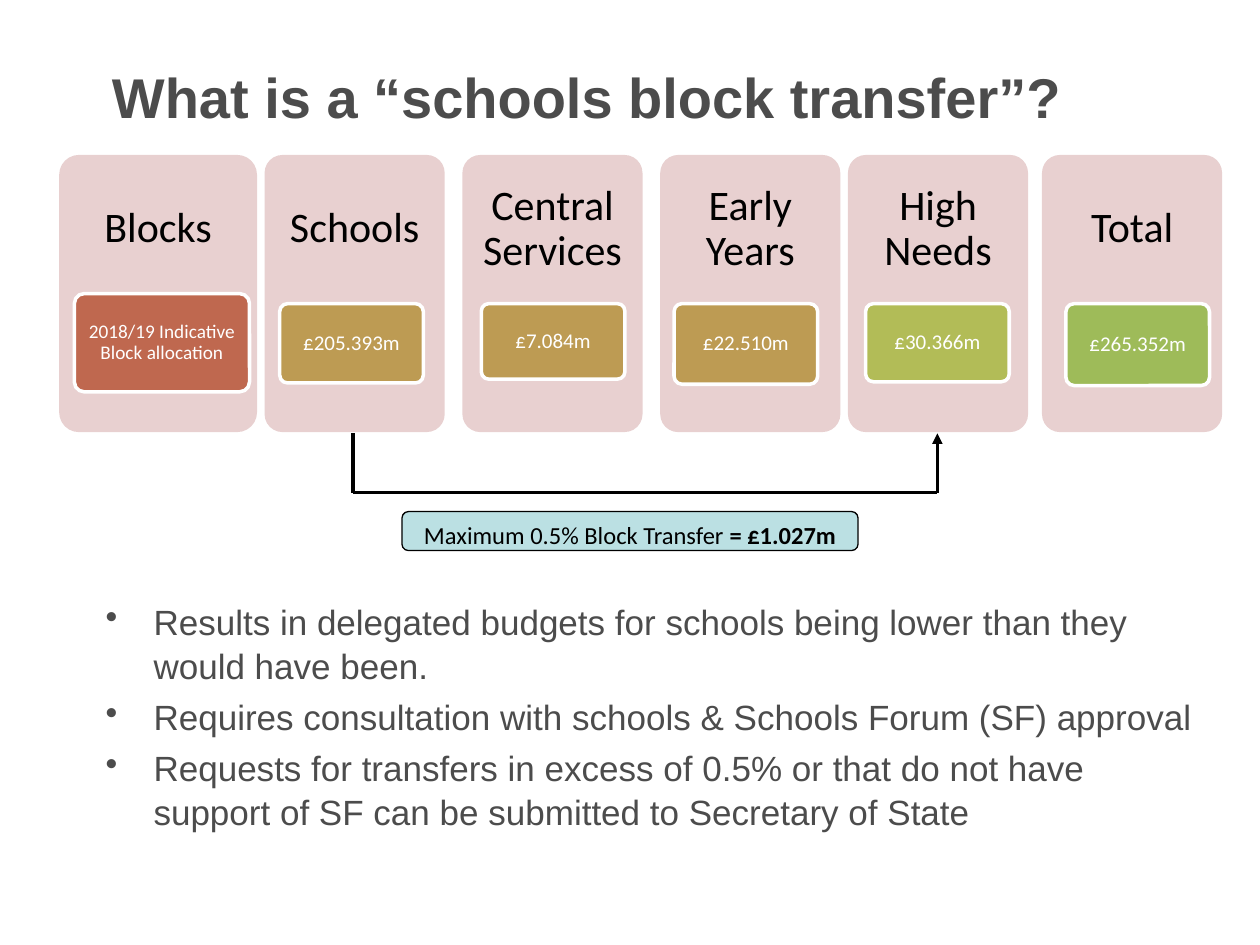
"""Build the slide that explains a schools block transfer."""
from lxml import etree
from pptx import Presentation
from pptx.dml.color import RGBColor
from pptx.enum.shapes import MSO_CONNECTOR, MSO_SHAPE
from pptx.enum.text import MSO_ANCHOR, PP_ALIGN
from pptx.oxml.ns import qn
from pptx.util import Inches, Pt


def color(code):
    return RGBColor.from_string(code)


def write(shape, paras, size, font="Calibri", ink="000000", bold=False,
          align=PP_ALIGN.CENTER, anchor=MSO_ANCHOR.MIDDLE, line=None,
          pad=(0.1, 0.05), gap=0, bullet=None):
    frame = shape.text_frame
    frame.word_wrap = True
    frame.vertical_anchor = anchor
    frame.margin_left = frame.margin_right = Inches(pad[0])
    frame.margin_top = frame.margin_bottom = Inches(pad[1])
    for i, runs in enumerate(paras):
        para = frame.paragraphs[0] if i == 0 else frame.add_paragraph()
        para.alignment = align
        para.line_spacing = line
        para.space_before = Pt(gap if i else 0)
        if bullet:
            props = para._p.get_or_add_pPr()
            props.set("marL", str(Inches(0.38)))
            props.set("indent", str(Inches(-0.38)))
            etree.SubElement(props, qn("a:buChar"), char=bullet)
        for text, strong in runs:
            run = para.add_run()
            run.text = text
            run.font.size = Pt(size)
            run.font.name = font
            run.font.bold = bold or strong
            run.font.color.rgb = color(ink)


deck = Presentation()
deck.slide_width, deck.slide_height = Inches(10), Inches(7.5)
slide = deck.slides.add_slide(deck.slide_layouts[6])
shapes = slide.shapes

title = shapes.add_textbox(Inches(0.79), Inches(0.4), Inches(8.92), Inches(0.72))
write(title, [[("What is a “schools block transfer”?", False)]], 32,
      font="Arial", ink="4C4C4C", bold=True, align=PP_ALIGN.LEFT)

blocks = [
    ("Blocks", 0.47, 1.57, "2018/19 Indicative Block allocation", 11,
     "BF684F", (0.59, 2.33, 1.39, 0.78)),
    ("Schools", 2.1, 1.43, "£205.393m", 12, "BD9B53", (2.22, 2.41, 1.14, 0.63)),
    ("Central Services", 3.67, 1.43, "£7.084m", 12,
     "BD9B53", (3.82, 2.41, 1.14, 0.6)),
    ("Early Years", 5.24, 1.43, "£22.510m", 12,
     "BD9B53", (5.35, 2.41, 1.14, 0.64)),
    ("High Needs", 6.73, 1.43, "£30.366m", 12,
     "B2BC57", (6.87, 2.41, 1.14, 0.62)),
    ("Total", 8.27, 1.43, "£265.352m", 12, "9EBB59", (8.46, 2.41, 1.14, 0.65)),
]
for name, left, width, value, size, fill, place in blocks:
    card = shapes.add_shape(MSO_SHAPE.ROUNDED_RECTANGLE, Inches(left),
                            Inches(1.23), Inches(width), Inches(2.2))
    card.adjustments[0] = 0.1
    card.shadow.inherit = False
    card.fill.solid()
    card.fill.fore_color.rgb = color("E8D0D0")
    card.line.fill.background()
    head = shapes.add_textbox(Inches(left + 0.02), Inches(1.37),
                              Inches(width - 0.04), Inches(0.9))
    write(head, [[(name, False)]], 24, line=0.9)
    badge = shapes.add_shape(MSO_SHAPE.ROUNDED_RECTANGLE, *map(Inches, place))
    badge.adjustments[0] = 0.1
    badge.shadow.inherit = False
    badge.fill.solid()
    badge.fill.fore_color.rgb = color(fill)
    badge.line.color.rgb = color("FFFFFF")
    badge.line.width = Pt(2)
    write(badge, [[(value, False)]], size, ink="FFFFFF", line=0.9,
          pad=(0.05, 0.03))

route = [(2.8, 3.44), (2.8, 3.91), (7.44, 3.91), (7.44, 3.44)]
for start, end, weight in zip(route, route[1:], (2.25, 1.5, 1.5)):
    link = shapes.add_connector(MSO_CONNECTOR.STRAIGHT,
                                *map(Inches, start + end))
    link.line.color.rgb = color("000000")
    link.line.width = Pt(weight)
    etree.SubElement(link._element.spPr, qn("a:effectLst"))
etree.SubElement(link.line._get_or_add_ln(), qn("a:tailEnd"), type="triangle")

note = shapes.add_shape(MSO_SHAPE.ROUNDED_RECTANGLE, Inches(3.19),
                        Inches(4.06), Inches(3.62), Inches(0.31))
note.shadow.inherit = False
note.fill.solid()
note.fill.fore_color.rgb = color("BBE0E3")
note.line.color.rgb = color("000000")
note.line.width = Pt(0.75)
write(note, [[("Maximum 0.5% Block Transfer ", False), ("= £1.027m", True)]],
      14, anchor=MSO_ANCHOR.TOP)

points = [
    "Results in delegated budgets for schools being lower than they would "
    "have been.",
    "Requires consultation with schools & Schools Forum (SF) approval",
    "Requests for transfers in excess of 0.5% or that do not have support of "
    "SF can be submitted to Secretary of State",
]
body = shapes.add_textbox(Inches(0.74), Inches(4.7), Inches(8.92), Inches(2.52))
write(body, [[(text, False)] for text in points], 20, font="Arial",
      ink="4C4C4C", align=PP_ALIGN.LEFT, anchor=MSO_ANCHOR.TOP, line=1.05,
      gap=4, bullet="•")

deck.save("out.pptx")
